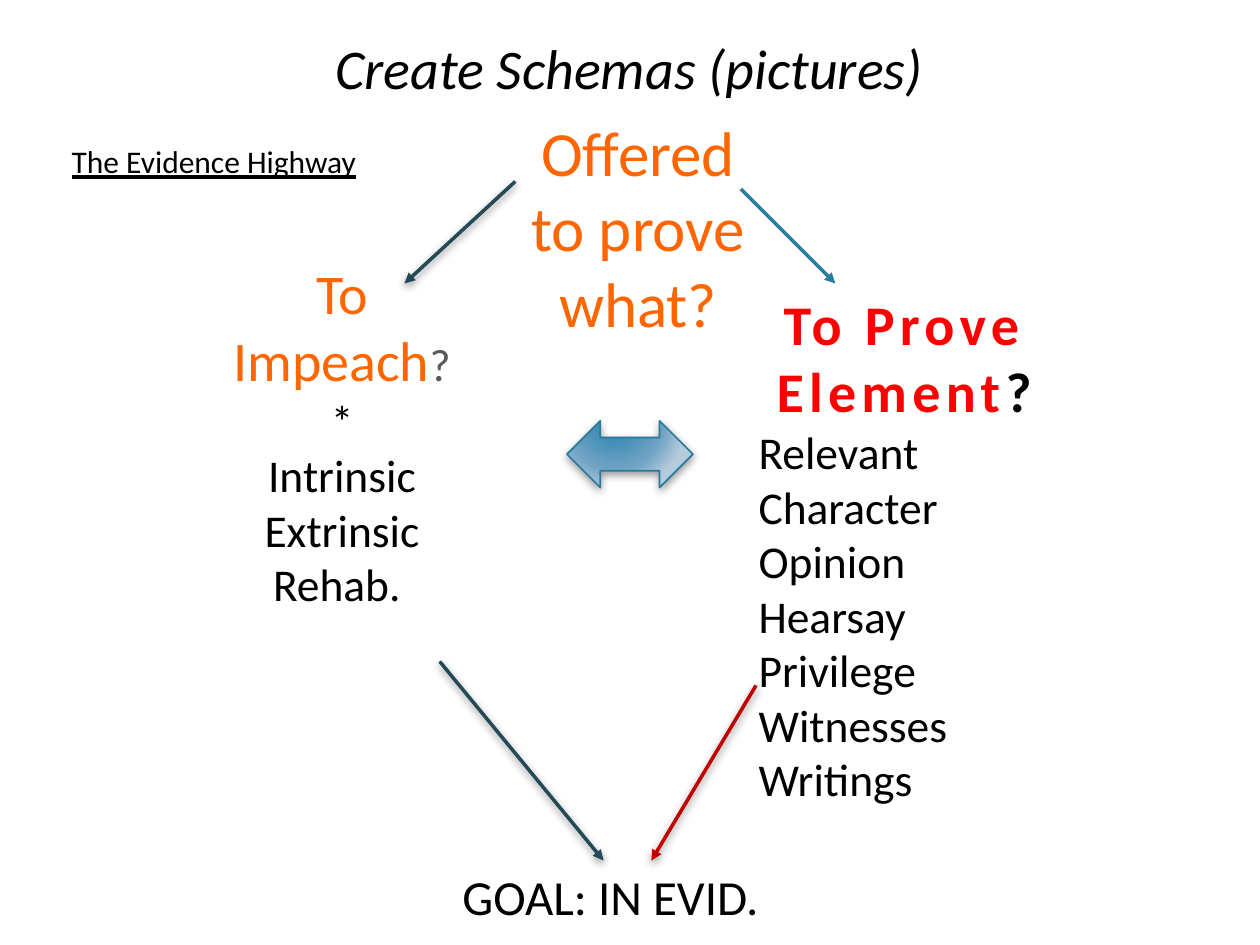
from dataclasses import dataclass

from lxml.etree import SubElement
from pptx import Presentation
from pptx.dml.color import RGBColor
from pptx.enum.shapes import MSO_CONNECTOR, MSO_SHAPE
from pptx.enum.text import MSO_ANCHOR, MSO_AUTO_SIZE, PP_ALIGN
from pptx.oxml import parse_xml
from pptx.oxml.ns import nsdecls, qn
from pptx.util import Inches, Pt


@dataclass(frozen=True)
class Theme:
    """Colours and type sizes of the slide."""
    font: str = "Calibri"
    black: str = "000000"
    orange: str = "FF6600"
    red: str = "FF0000"
    grey: str = "595959"
    teal: str = "244A58"
    crimson: str = "C00000"
    blue: str = "2C7C9F"
    edge: str = "287A9E"
    glow: str = "F4F7F8"
    white: str = "FFFFFF"
    gradient: tuple = ((0, "2180AA"), (69, "71A4C5"), (100, "B5CBDC"))
    question: int = 36
    heading: int = 32
    goal: int = 28
    body: int = 26
    label: int = 18


THEME = Theme()


def add_text(paragraph, text, size=THEME.body, color=THEME.black, bold=False,
             italic=False, underline=False, spacing=0, outline=None):
    """Add one formatted run; outline is a colour and a width in points."""
    run = paragraph.add_run()
    run.text = text
    font = run.font
    font.name, font.size = THEME.font, Pt(size)
    font.bold, font.italic, font.underline = bold, italic, underline
    font.color.rgb = RGBColor.from_string(color)
    properties = run._r.get_or_add_rPr()
    if spacing:
        properties.set("spc", str(spacing * 100))
    if outline:
        edge, width = outline
        properties.insert(0, parse_xml(
            f'<a:ln {nsdecls("a")} w="{Pt(width)}"><a:solidFill>'
            f'<a:srgbClr val="{edge}"/></a:solidFill></a:ln>'))


def add_frame(slide, box, inset=0.05, anchor=MSO_ANCHOR.TOP, fit=MSO_AUTO_SIZE.SHAPE_TO_FIT_TEXT):
    """Add a wrapping text box and return its text frame."""
    frame = slide.shapes.add_textbox(*map(Inches, box)).text_frame
    frame.word_wrap, frame.auto_size, frame.vertical_anchor = True, fit, anchor
    frame.margin_left = frame.margin_right = Inches(inset)
    frame.margin_top = frame.margin_bottom = Inches(0.05)
    return frame


def add_list(frame, items, align):
    """Append one body paragraph for each item."""
    for item in items:
        paragraph = frame.add_paragraph()
        paragraph.alignment = align
        add_text(paragraph, item)


def set_shadow(element, alpha):
    """Give a shape or connector a soft shadow below, or none if alpha is 0."""
    properties = element.spPr
    effects = properties.find(qn("a:effectLst"))
    if effects is None:
        effects = SubElement(properties, qn("a:effectLst"))
    if alpha:
        effects.append(parse_xml(
            f'<a:outerShdw {nsdecls("a")} blurRad="{Pt(5)}" dist="{Pt(2)}" '
            f'dir="5400000" rotWithShape="0"><a:srgbClr val="{THEME.black}">'
            f'<a:alpha val="{alpha * 1000}"/></a:srgbClr></a:outerShdw>'))


def add_title(slide, box):
    """Place the slide title."""
    frame = add_frame(slide, box, 0.1, MSO_ANCHOR.BOTTOM, MSO_AUTO_SIZE.NONE)
    frame.paragraphs[0].alignment = PP_ALIGN.CENTER
    add_text(frame.paragraphs[0], "Create Schemas (pictures)", THEME.heading, italic=True)


def add_element_branch(slide, box):
    """Place the branch on proving an element."""
    frame = add_frame(slide, box)
    heading = frame.paragraphs[0]
    heading.alignment = PP_ALIGN.CENTER
    style = {"size": THEME.heading, "bold": True, "spacing": 3}
    add_text(heading, "To Prove Element", color=THEME.red, outline=(THEME.glow, 0.9), **style)
    add_text(heading, "?", outline=(THEME.white, 1.4), **style)
    add_list(frame, ("Relevant", "Character", "Opinion", "Hearsay", "Privilege",
                     "Witnesses", "Writings"), PP_ALIGN.LEFT)


def add_impeach_branch(slide, box):
    """Place the branch on impeachment."""
    frame = add_frame(slide, box)
    heading = frame.paragraphs[0]
    heading.alignment = PP_ALIGN.CENTER
    add_text(heading, "To Impeach", THEME.heading, THEME.orange)
    add_text(heading, "?", color=THEME.grey)
    add_list(frame, ("*", "Intrinsic", "Extrinsic", "Rehab. "), PP_ALIGN.CENTER)


def add_goal(slide, box):
    """Place the goal where both branches meet."""
    add_text(add_frame(slide, box).paragraphs[0], "GOAL: IN EVID.", THEME.goal)


def add_question(slide, box):
    """Place the opening question."""
    question = add_frame(slide, box).paragraphs[0]
    question.alignment = PP_ALIGN.CENTER
    add_text(question, "Offered to prove what?", THEME.question, THEME.orange)


def add_highway_label(slide, box):
    """Place the name of the schema."""
    label = add_frame(slide, box, 0.1).paragraphs[0]
    add_text(label, "The Evidence Highway", THEME.label, underline=True)


def add_route(slide, start, end, color, shadow=43):
    """Draw an arrow from start to end."""
    route = slide.shapes.add_connector(MSO_CONNECTOR.STRAIGHT, *map(Inches, start + end))
    route.line.width = Pt(2)
    route.line.color.rgb = RGBColor.from_string(color)
    SubElement(route.line._get_or_add_ln(), qn("a:tailEnd"), type="triangle")
    set_shadow(route._element, shadow)


def add_exchange(slide, box):
    """Place the two-way arrow between the branches."""
    exchange = slide.shapes.add_shape(MSO_SHAPE.LEFT_RIGHT_ARROW, *map(Inches, box))
    exchange.shadow.inherit = False
    exchange.fill.solid()
    exchange.line.color.rgb = RGBColor.from_string(THEME.edge)
    exchange.line.width = Pt(1)
    stops = "".join(f'<a:gs pos="{place * 1000}"><a:srgbClr val="{color}"/></a:gs>'
                    for place, color in THEME.gradient)
    properties = exchange._element.spPr
    properties.replace(properties.find(qn("a:solidFill")), parse_xml(
        f'<a:gradFill {nsdecls("a")} rotWithShape="1"><a:gsLst>{stops}</a:gsLst>'
        '<a:path path="circle"><a:fillToRect l="38000" t="-20000" r="62000" b="120000"/>'
        '</a:path></a:gradFill>'))
    set_shadow(exchange._element, 40)


def main():
    """Build and save the slide."""
    deck = Presentation()
    deck.slide_width, deck.slide_height = Inches(10), Inches(7.5)
    slide = deck.slides.add_slide(deck.slide_layouts[6])
    add_title(slide, (1.62, -0.17, 6.75, 1.02))
    add_element_branch(slide, (5.97, 2.25, 2.41, 4.24))
    add_impeach_branch(slide, (1.62, 2, 2.19, 2.93))
    add_route(slide, (4.09, 1.44), (3.21, 2.25), THEME.teal)
    add_route(slide, (3.49, 5.25), (4.79, 6.83), THEME.teal)
    add_route(slide, (6, 5.44), (5.17, 6.83), THEME.crimson)
    add_goal(slide, (3.62, 6.83, 3.17, 0.57))
    add_question(slide, (4.16, 0.85, 1.81, 1.92))
    add_exchange(slide, (4.5, 3.34, 1, 0.53))
    add_route(slide, (5.88, 1.5), (6.63, 2.25), THEME.blue, shadow=0)
    add_highway_label(slide, (0.47, 1.08, 2.87, 0.4))
    deck.save("out.pptx")


if __name__ == "__main__":
    main()
